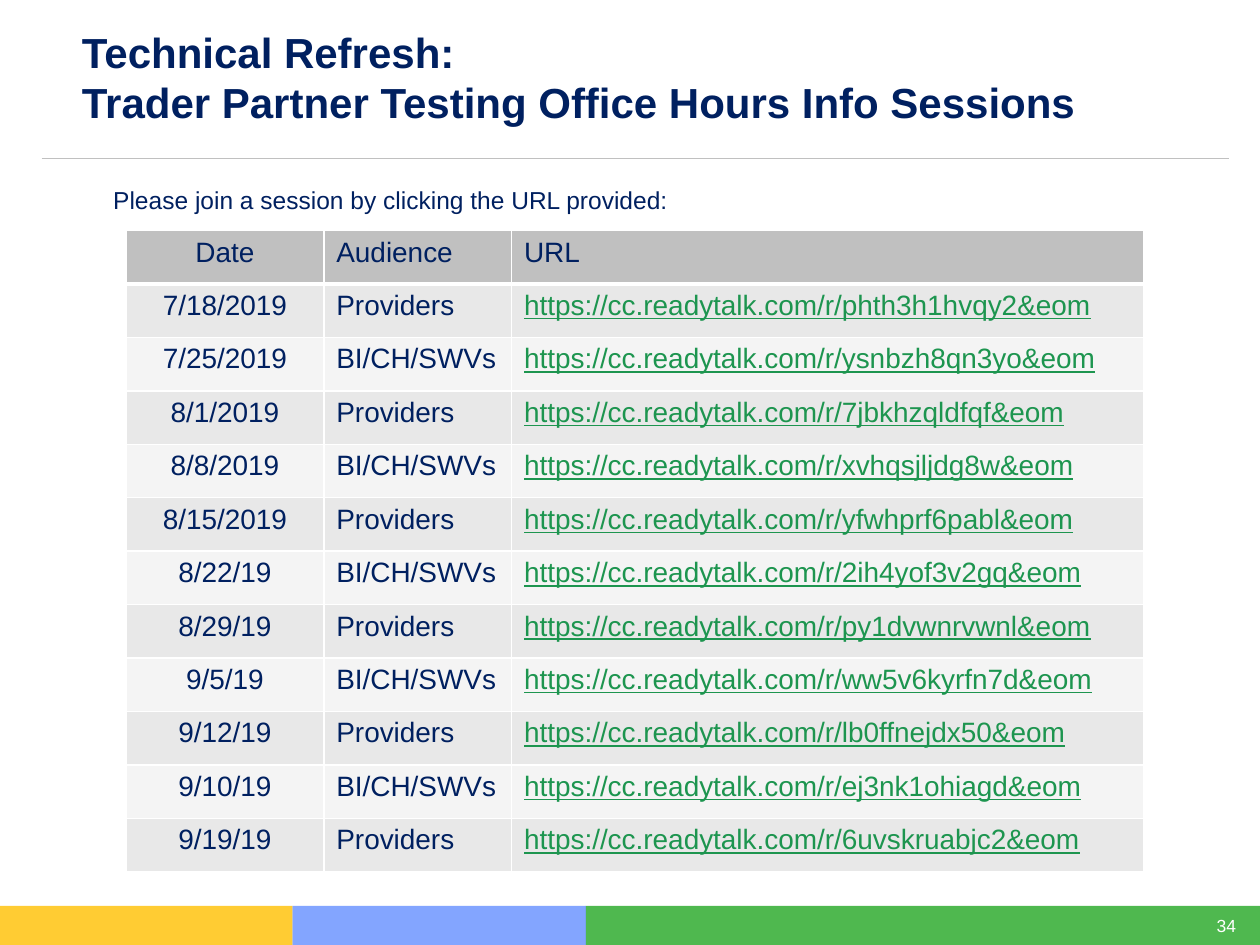
from dataclasses import dataclass
from typing import Any

from lxml.etree import SubElement
from pptx import Presentation
from pptx.dml.color import RGBColor
from pptx.enum.shapes import MSO_CONNECTOR, MSO_SHAPE
from pptx.enum.text import MSO_ANCHOR, MSO_AUTO_SIZE, PP_ALIGN
from pptx.oxml import parse_xml
from pptx.oxml.ns import nsdecls, qn
from pptx.util import Inches, Pt


@dataclass(frozen=True)
class Theme:
    font: str = "Arial"
    ink: str = "002060"
    link: str = "1D954F"
    white: str = "FFFFFF"
    gray: str = "C0C0C0"
    bands: tuple[str, str] = ("E8E8E8", "F4F4F4")
    title: int = 24
    cell: int = 16
    lead: int = 14
    page: int = 10
    rule: float = 0.75


@dataclass(frozen=True)
class Box:
    left: float
    top: float
    width: float
    height: float

    def place(self) -> tuple[int, int, int, int]:
        return (
            across(self.left),
            down(self.top),
            across(self.width),
            down(self.height),
        )


@dataclass(frozen=True)
class Bar:
    left: float
    width: float
    color: str
    alpha: int


@dataclass(frozen=True)
class Session:
    date: str
    group: str
    code: str

    def cells(self) -> tuple[str, str, str]:
        return self.date, self.group, f"https://cc.readytalk.com/r/{self.code}&eom"


WIDTH, HEIGHT = Inches(10), Inches(7.5)
THEME = Theme()
BARS = [
    Bar(23.2, 23.3, "5E8BFF", 77),
    Bar(0, 23.2, "FFC000", 80),
    Bar(46.5, 53.5, "009900", 69),
]
HEADER = ("Date", "Audience", "URL")
SHARES = (15.7, 14.9, 50.2)
DATES = (
    "7/18/2019 7/25/2019 8/1/2019 8/8/2019 8/15/2019 8/22/19 "
    "8/29/19 9/5/19 9/12/19 9/10/19 9/19/19"
).split()
CODES = (
    "phth3h1hvqy2 ysnbzh8qn3yo 7jbkhzqldfqf xvhqsjljdg8w yfwhprf6pabl 2ih4yof3v2gq "
    "py1dvwnrvwnl ww5v6kyrfn7d lb0ffnejdx50 ej3nk1ohiagd 6uvskruabjc2"
).split()
GROUPS = ("Providers", "BI/CH/SWVs")
SESSIONS = [
    Session(date, GROUPS[i % 2], code)
    for i, (date, code) in enumerate(zip(DATES, CODES))
]


def across(share: float) -> int:
    return round(WIDTH * share / 100)


def down(share: float) -> int:
    return round(HEIGHT * share / 100)


def write(
    frame: Any,
    text: str,
    size: int,
    color: str = THEME.ink,
    align: PP_ALIGN = PP_ALIGN.LEFT,
    bold: bool = False,
    under: bool = False,
) -> None:
    frame.text = text
    for para in frame.paragraphs:
        para.alignment = align
        for run in para.runs:
            font = run.font
            font.name, font.size = THEME.font, Pt(size)
            font.bold, font.underline = bold, under
            font.color.rgb = RGBColor.from_string(color)


def trim(frame: Any) -> None:
    frame.margin_left = frame.margin_right = 0
    frame.margin_top = frame.margin_bottom = 0


def draw_bar(slide: Any, bar: Bar) -> None:
    box = Box(bar.left, 95.87, bar.width, 4.2)
    shape = slide.shapes.add_shape(MSO_SHAPE.RECTANGLE, *box.place())
    shape.shadow.inherit = False
    shape.line.fill.background()
    shape.fill.solid()
    shape.fill.fore_color.rgb = RGBColor.from_string(bar.color)
    color = shape.fill._xPr.find(qn("a:solidFill"))[0]
    SubElement(color, qn("a:alpha"), val=str(bar.alpha * 1000))


def draw_page(slide: Any) -> None:
    frame = slide.shapes.add_textbox(*Box(96.4, 96.8, 1.7, 2.27).place()).text_frame
    trim(frame)
    frame.word_wrap = False
    frame.vertical_anchor = MSO_ANCHOR.MIDDLE
    write(frame, "34", THEME.page, THEME.white, PP_ALIGN.RIGHT)


def draw_title(slide: Any) -> None:
    title = slide.shapes.title
    title.left, title.top, title.width, title.height = Box(6.5, 2.8, 84.8, 10.8).place()
    frame = title.text_frame
    trim(frame)
    frame.word_wrap = True
    frame.auto_size = MSO_AUTO_SIZE.NONE
    frame.vertical_anchor = MSO_ANCHOR.TOP
    text = "Technical Refresh:\nTrader Partner Testing Office Hours Info Sessions"
    write(frame, text, THEME.title, bold=True)


def draw_rule(slide: Any) -> None:
    level = down(16.8)
    rule = slide.shapes.add_connector(
        MSO_CONNECTOR.STRAIGHT, across(3.3), level, across(97.5), level
    )
    rule.line.width = Pt(THEME.rule)
    rule.line.color.rgb = RGBColor.from_string(THEME.gray)
    SubElement(rule._element.spPr, qn("a:effectLst"))


def draw_lead(slide: Any) -> None:
    frame = slide.shapes.add_textbox(*Box(8, 18.93, 91.1, 4.53).place()).text_frame
    frame.word_wrap = True
    write(frame, "Please join a session by clicking the URL provided:", THEME.lead)


def edge(cell: Any, base: int) -> None:
    props = cell._tc.get_or_add_tcPr()
    for i, (side, width) in enumerate(zip("LRTB", (1, 1, 1, base))):
        line = parse_xml(
            f'<a:ln{side} {nsdecls("a")} w="{Pt(width)}"><a:solidFill>'
            f'<a:srgbClr val="{THEME.white}"/></a:solidFill></a:ln{side}>'
        )
        props.insert(i, line)


def draw_table(slide: Any) -> None:
    rows = [HEADER] + [session.cells() for session in SESSIONS]
    box = Box(10, 24.4, sum(SHARES), 67.87)
    table = slide.shapes.add_table(len(rows), len(SHARES), *box.place()).table
    for column, share in zip(table.columns, SHARES):
        column.width = across(share)
    for r, row in enumerate(rows):
        for c, text in enumerate(row):
            cell = table.cell(r, c)
            fill = THEME.bands[(r - 1) % 2] if r else THEME.gray
            cell.fill.solid()
            cell.fill.fore_color.rgb = RGBColor.from_string(fill)
            edge(cell, 1 if r else 3)
            link = r > 0 and c == 2
            color = THEME.link if link else THEME.ink
            align = PP_ALIGN.LEFT if c else PP_ALIGN.CENTER
            write(cell.text_frame, text, THEME.cell, color, align, under=link)


def main() -> None:
    deck = Presentation()
    deck.slide_width, deck.slide_height = WIDTH, HEIGHT
    slide = deck.slides.add_slide(deck.slide_layouts[5])
    for bar in BARS:
        draw_bar(slide, bar)
    for draw in (draw_page, draw_title, draw_rule, draw_lead, draw_table):
        draw(slide)
    deck.save("out.pptx")


if __name__ == "__main__":
    main()
